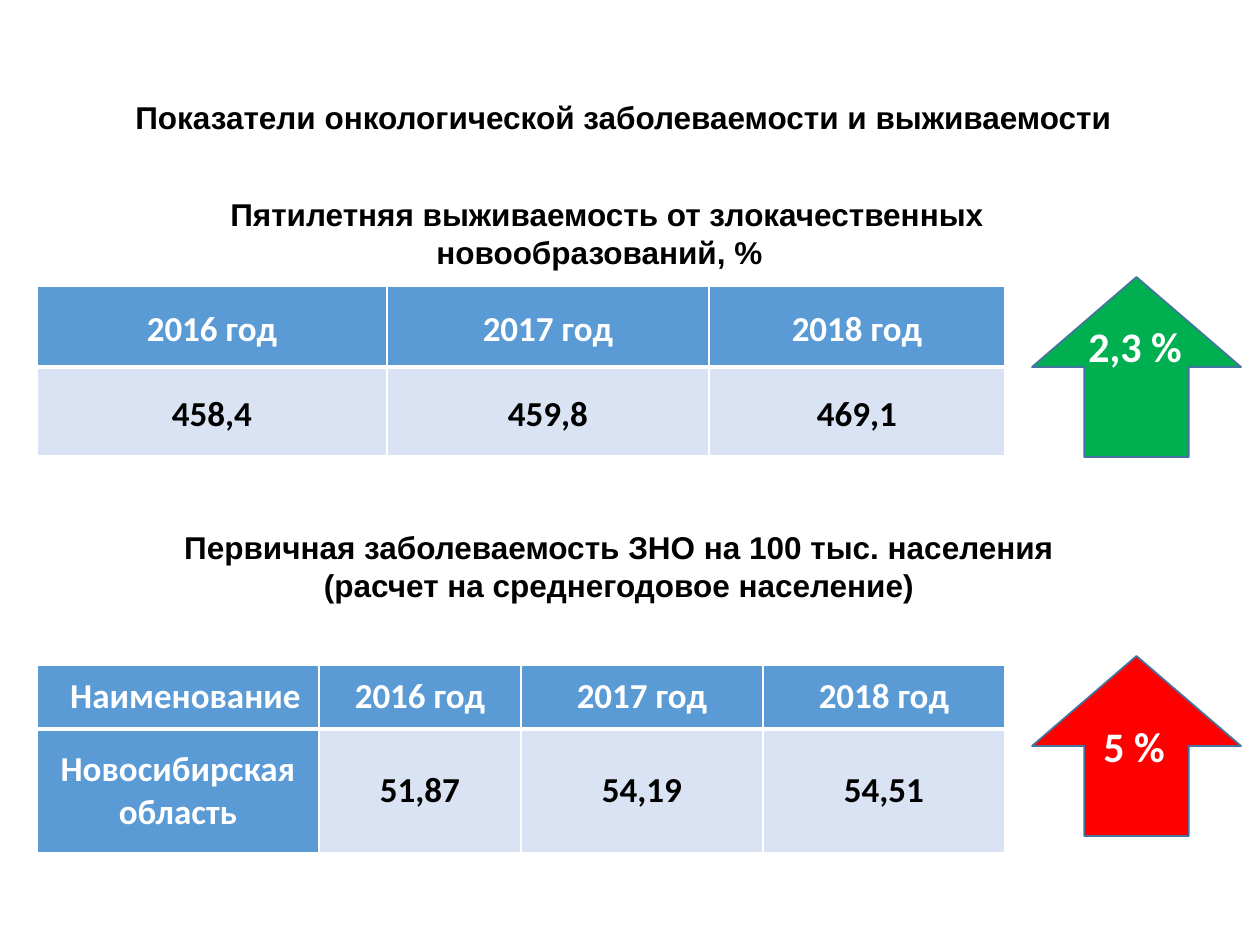
from lxml.etree import SubElement
from pptx import Presentation
from pptx.dml.color import RGBColor
from pptx.enum.shapes import MSO_SHAPE
from pptx.enum.text import MSO_ANCHOR, MSO_AUTO_SIZE, PP_ALIGN
from pptx.oxml.ns import qn
from pptx.util import Emu, Pt

SCALE = 914400 / 126
WHITE, BLACK = "FFFFFF", "000000"
BLUE, PALE = "5B9BD5", "DAE3F3"
INDENT = 15
YEARS = ["2016 год", "2017 год", "2018 год"]


def px(n):
    return Emu(round(n * SCALE))


def color(code):
    return RGBColor.from_string(code)


def write(frame, text, size=20, face="Calibri", ink=BLACK,
          align=PP_ALIGN.CENTER, indent=0, lead=None):
    """Fill a text frame, one paragraph per line of text."""
    for i, line in enumerate(text.split("\n")):
        para = frame.paragraphs[0] if i == 0 else frame.add_paragraph()
        para.alignment = align
        if lead:
            para.line_spacing = lead
        if indent:
            para._p.get_or_add_pPr().set("indent", str(px(indent)))
        run = para.add_run()
        run.text = line
        font = run.font
        font.size, font.name, font.bold = Pt(size), face, True
        font.color.rgb = color(ink)


def add_label(slide, box, text, wrap=True, **form):
    frame = slide.shapes.add_textbox(*map(px, box)).text_frame
    frame.word_wrap = wrap
    frame.auto_size = MSO_AUTO_SIZE.SHAPE_TO_FIT_TEXT
    write(frame, text, **form)


def add_arrow(slide, top, fill):
    arrow = slide.shapes.add_shape(
        MSO_SHAPE.UP_ARROW, *map(px, (1032, top, 209, 180)))
    arrow.shadow.inherit = False
    arrow.fill.solid()
    arrow.fill.fore_color.rgb = color(fill)
    arrow.line.color.rgb = color("43739E")
    arrow.line.width = Pt(1)


def add_edges(cell, top, bottom):
    """Draw white cell borders; top and bottom are widths in points."""
    props = cell._tc.get_or_add_tcPr()
    widths = {"lnL": 1, "lnR": 1, "lnT": top, "lnB": bottom}
    for i, (tag, width) in enumerate(widths.items()):
        edge = SubElement(props, qn("a:" + tag), w=str(Pt(width)))
        fill = SubElement(edge, qn("a:solidFill"))
        SubElement(fill, qn("a:srgbClr"), val=WHITE)
        props.insert(i, edge)


def add_grid(slide, top, cols, rows, data, named=False, lead=None):
    """Add a table; named means its first column holds names."""
    box = (37, top, sum(cols), sum(rows))
    table = slide.shapes.add_table(
        len(rows), len(cols), *map(px, box)).table
    for col, width in zip(table.columns, cols):
        col.width = px(width)
    for r, (row, height) in enumerate(zip(table.rows, rows)):
        row.height = px(height)
        for c, cell in enumerate(row.cells):
            head = r == 0 or (named and c == 0)
            cell.vertical_anchor = MSO_ANCHOR.MIDDLE
            cell.margin_left = cell.margin_right = px(9)
            cell.margin_top = cell.margin_bottom = 0
            cell.fill.solid()
            cell.fill.fore_color.rgb = color(BLUE if head else PALE)
            add_edges(cell, *((1, 3) if r == 0 else (3, 1)))
            corner = named and r == c == 0
            write(cell.text_frame, data[r][c], lead=lead,
                  ink=WHITE if head else BLACK,
                  indent=INDENT if corner else 0)


def main():
    deck = Presentation()
    deck.slide_width, deck.slide_height = px(1260), px(945)
    slide = deck.slides.add_slide(deck.slide_layouts[6])

    add_grid(slide, 665, [282, 202, 242, 242], [64, 124],
             [["Наименование"] + YEARS,
              ["Новосибирская область", "51,87", "54,19", "54,51"]],
             named=True)
    add_grid(slide, 286, [350, 322, 296], [81, 89],
             [YEARS, ["458,4", "459,8", "469,1"]], lead=1.15)

    title = dict(size=18, face="Arial", indent=INDENT)
    add_label(slide, (102, 92, 1028, 51),
              "Показатели онкологической заболеваемости и выживаемости",
              wrap=False, **title)
    add_label(slide, (102, 189, 995, 89),
              "Пятилетняя выживаемость от злокачественных "
              "новообразований, %", **title)
    add_label(slide, (69, 522, 1085, 89),
              "Первичная заболеваемость ЗНО на 100 тыс. населения\n"
              "(расчет на среднегодовое население)", **title)

    add_arrow(slide, 656, "FF0000")
    add_arrow(slide, 277, "00B050")
    change = dict(size=24, ink=WHITE, align=PP_ALIGN.LEFT, wrap=False)
    add_label(slide, (1076, 314, 120, 63), "2,3 %", **change)
    add_label(slide, (1091, 714, 87, 63), "5 %", **change)
    deck.save("out.pptx")


if __name__ == "__main__":
    main()
